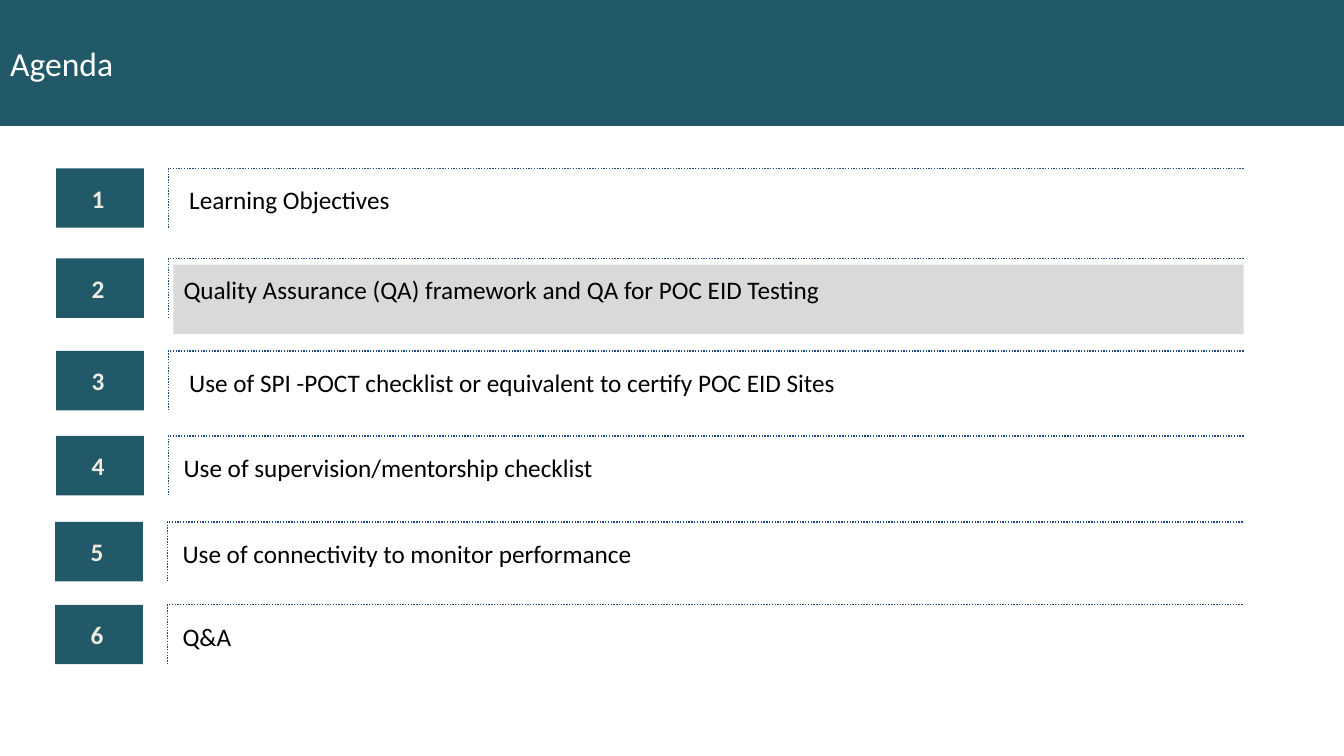
"""Build an agenda slide with six numbered rows, the second one highlighted."""
import pptx
import pptx.dml.color
import pptx.enum.dml
import pptx.enum.shapes
import pptx.enum.text
import pptx.util

Pt = pptx.util.Pt
RGBColor = pptx.dml.color.RGBColor
PP_ALIGN = pptx.enum.text.PP_ALIGN
MSO_ANCHOR = pptx.enum.text.MSO_ANCHOR

TEAL = RGBColor(0x21, 0x59, 0x68)
NAVY = RGBColor(0x1F, 0x49, 0x7D)
GREY = RGBColor(0xD9, 0xD9, 0xD9)
CREAM = RGBColor(0xEE, 0xEC, 0xE1)
WHITE = RGBColor(0xFF, 0xFF, 0xFF)
BLACK = RGBColor(0x00, 0x00, 0x00)

ROW_HEIGHT = 42.5
ROWS = [
    (40.2, 120.2, " Learning Objectives"),
    (40.2, 184.5, "Quality Assurance (QA) framework and QA for POC EID Testing"),
    (40.2, 250.6, " Use of SPI -POCT checklist or equivalent to certify POC EID Sites"),
    (40.2, 311.35, "Use of supervision/mentorship checklist"),
    (39.5, 372.8, "Use of connectivity to monitor performance"),
    (39.5, 432, "Q&A"),
]


def add_box(page, left, top, width, height, colour):
    box = page.shapes.add_shape(
        pptx.enum.shapes.MSO_SHAPE.RECTANGLE, Pt(left), Pt(top), Pt(width), Pt(height))
    box.shadow.inherit = False
    box.fill.solid()
    box.fill.fore_color.rgb = colour
    box.line.fill.background()
    return box


def set_text(frame, text, size, colour, align, bold=False):
    frame.text = text
    para = frame.paragraphs[0]
    para.alignment = align
    para.font.name = "Calibri"
    para.font.size = Pt(size)
    para.font.bold = bold
    para.font.color.rgb = colour
    return para


deck = pptx.Presentation()
deck.slide_width, deck.slide_height = Pt(960), Pt(540)
page = deck.slides.add_slide(deck.slide_layouts[5])

title = page.shapes.title
title.left, title.top, title.width, title.height = Pt(0), Pt(0), Pt(960), Pt(90)
title.fill.solid()
title.fill.fore_color.rgb = TEAL
title.text_frame.vertical_anchor = MSO_ANCHOR.MIDDLE
set_text(title.text_frame, "Agenda", 24, WHITE, PP_ALIGN.LEFT)

add_box(page, 123.8, 189, 764.6, 49.7, GREY)

for number, (left, top, topic) in enumerate(ROWS, start=1):
    badge = add_box(page, left, top, 62.6, ROW_HEIGHT, TEAL)
    frame = badge.text_frame
    frame.margin_left, frame.margin_right = Pt(4.3), Pt(7.2)
    frame.vertical_anchor = MSO_ANCHOR.MIDDLE
    set_text(frame, str(number), 18, CREAM, PP_ALIGN.CENTER, bold=True)

    label = page.shapes.add_textbox(Pt(left + 90.9), Pt(top + 13.2), Pt(714), Pt(20.9))
    frame = label.text_frame
    frame.word_wrap = True
    frame.margin_left = frame.margin_top = frame.margin_right = frame.margin_bottom = Pt(0)
    set_text(frame, topic, 18, BLACK, PP_ALIGN.LEFT).line_spacing = 0.95

    corner = left + 80.1
    builder = page.shapes.build_freeform(Pt(corner + 768), Pt(top))
    builder.add_line_segments(
        [(Pt(corner), Pt(top)), (Pt(corner), Pt(top + ROW_HEIGHT))], close=False)
    bracket = builder.convert_to_shape()
    bracket.shadow.inherit = False
    bracket.fill.background()
    bracket.line.color.rgb = NAVY
    bracket.line.width = Pt(1)
    bracket.line.dash_style = pptx.enum.dml.MSO_LINE.ROUND_DOT

deck.save("out.pptx")
